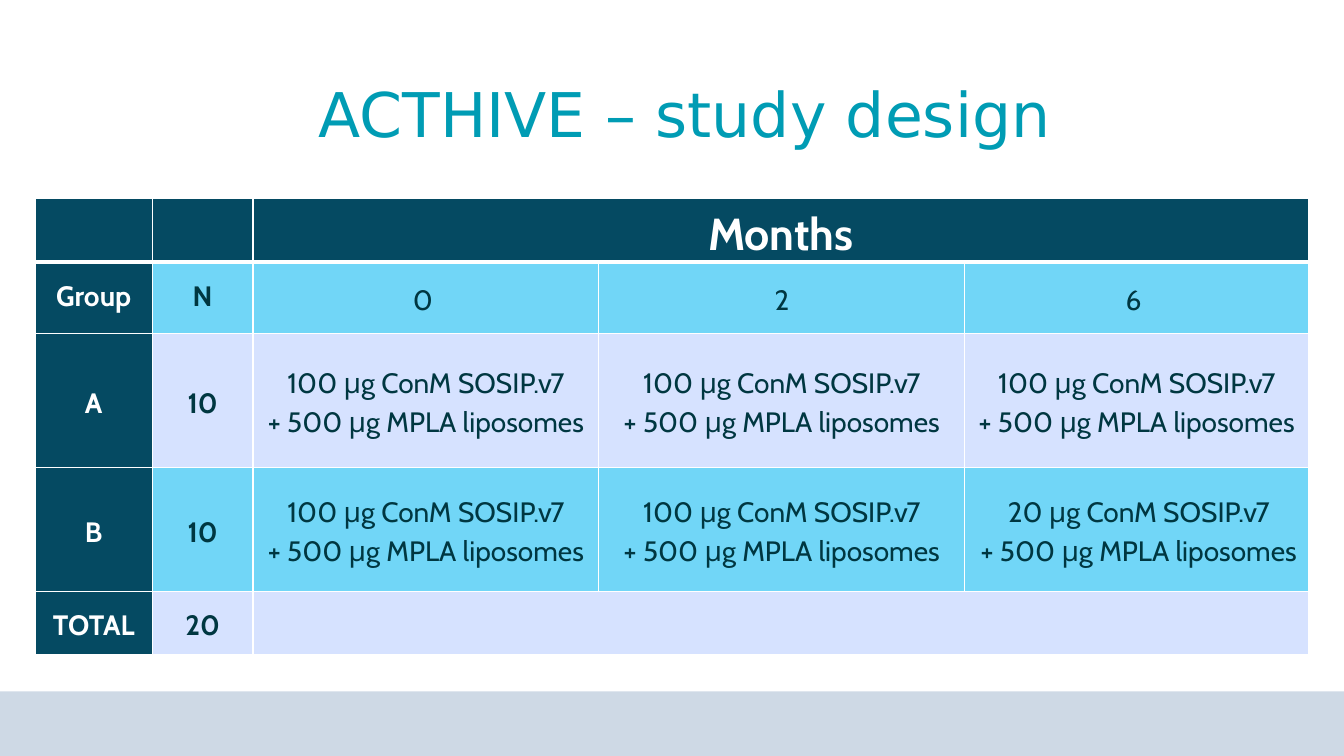
from lxml import etree
from pptx import Presentation
from pptx.dml.color import RGBColor
from pptx.enum.shapes import MSO_SHAPE
from pptx.enum.text import MSO_ANCHOR, PP_ALIGN
from pptx.oxml.ns import qn
from pptx.util import Inches, Pt

RECT = MSO_SHAPE.RECTANGLE
CENTER = PP_ALIGN.CENTER
TOP, MIDDLE = MSO_ANCHOR.TOP, MSO_ANCHOR.MIDDLE

WIDE, HIGH = 13.33, 7.5
TEAL, NAVY, INK = "009CB4", "054A62", "003741"
SKY, PALE, GREY, WHITE = "71D6F7", "D6E2FF", "CED9E5", "FFFFFF"

TITLE = "ACTHIVE – study design"
LIPO = "+ 500 μg MPLA liposomes"
FULL = "100 μg ConM SOSIP.v7\n" + LIPO
LOW = "20 μg ConM SOSIP.v7\n" + LIPO
ROWS = [
    ("", "", "Months", "", ""),
    ("Group", "N", "0 ", "2", "6 "),
    ("A", "10", FULL, FULL, FULL),
    ("B", "10", FULL, FULL, ""),
    ("TOTAL", "20", "", "", ""),
]
FILLS = [NAVY, SKY, PALE, SKY, PALE]
COLS = [1.16, 1, 3.43, 3.63, 3.41]
TALL = [0.63, 0.71, 1.33, 1.23, 0.62]
LEFT, HEAD = 0.35, 1.97


def color(code):
    return RGBColor.from_string(code)


def box(*sides):
    return [Inches(side) for side in sides]


def write(frame, text, size=20, font="Cabin", ink=INK, bold=False, space=1.15):
    frame.word_wrap = True
    for i, line in enumerate(text.split("\n")):
        para = frame.paragraphs[0] if i == 0 else frame.add_paragraph()
        para.alignment = CENTER
        para.line_spacing = space
        run = para.add_run()
        run.text = line
        run.font.size = Pt(size)
        run.font.name = font
        run.font.bold = bold
        run.font.color.rgb = color(ink)


def border(cell, base):
    props = cell._tc.get_or_add_tcPr()
    for i, side in enumerate(("lnL", "lnR", "lnT", "lnB")):
        width = base if side == "lnB" else 1
        line = etree.Element(qn("a:" + side), w=str(Pt(width)))
        fill = etree.SubElement(line, qn("a:solidFill"))
        etree.SubElement(fill, qn("a:srgbClr"), val=WHITE)
        props.insert(i, line)


def fill_cell(cell, text, row, col):
    dark = row == 0 or col == 0
    cell.fill.solid()
    cell.fill.fore_color.rgb = color(NAVY if dark else FILLS[row])
    border(cell, 3 if row == 0 else 1)
    cell.margin_left = cell.margin_right = Inches(0.07)
    cell.margin_top = cell.margin_bottom = 0
    label = row == 1 and col < 2
    cell.vertical_anchor = TOP if row == 0 or label else MIDDLE
    if text:
        write(cell.text_frame, text, size=32 if row == 0 else 20,
              ink=WHITE if dark else INK, bold=dark or col == 1,
              space=1.5 if label else 1.15)


def main():
    deck = Presentation()
    deck.slide_width, deck.slide_height = box(WIDE, HIGH)
    slide = deck.slides.add_slide(deck.slide_layouts[5])
    shapes = slide.shapes

    title = shapes.title
    title.left, title.top, title.width, title.height = box(0.23, 0.44, 13.13, 1.45)
    title.text_frame.vertical_anchor = MIDDLE
    write(title.text_frame, TITLE, size=44, font="DejaVu Sans", ink=TEAL, space=0.9)

    band = shapes.add_shape(RECT, *box(0, 6.86, WIDE, HIGH - 6.86))
    band.shadow.inherit = False
    band.fill.solid()
    band.fill.fore_color.rgb = color(GREY)
    band.line.fill.background()

    area = box(LEFT, HEAD, sum(COLS), sum(TALL))
    table = shapes.add_table(len(ROWS), len(COLS), *area).table
    table.first_row = table.horz_banding = False
    for col, width in zip(table.columns, COLS):
        col.width = Inches(width)
    for row, height in zip(table.rows, TALL):
        row.height = Inches(height)
    for r, texts in enumerate(ROWS):
        for c, text in enumerate(texts):
            fill_cell(table.cell(r, c), text, r, c)
    for r in (0, len(ROWS) - 1):
        table.cell(r, 2).merge(table.cell(r, 4))

    dose = shapes.add_textbox(*box(9.5, 4.81, 3.59, 0.88))
    write(dose.text_frame, LOW)

    deck.save("out.pptx")


if __name__ == "__main__":
    main()
